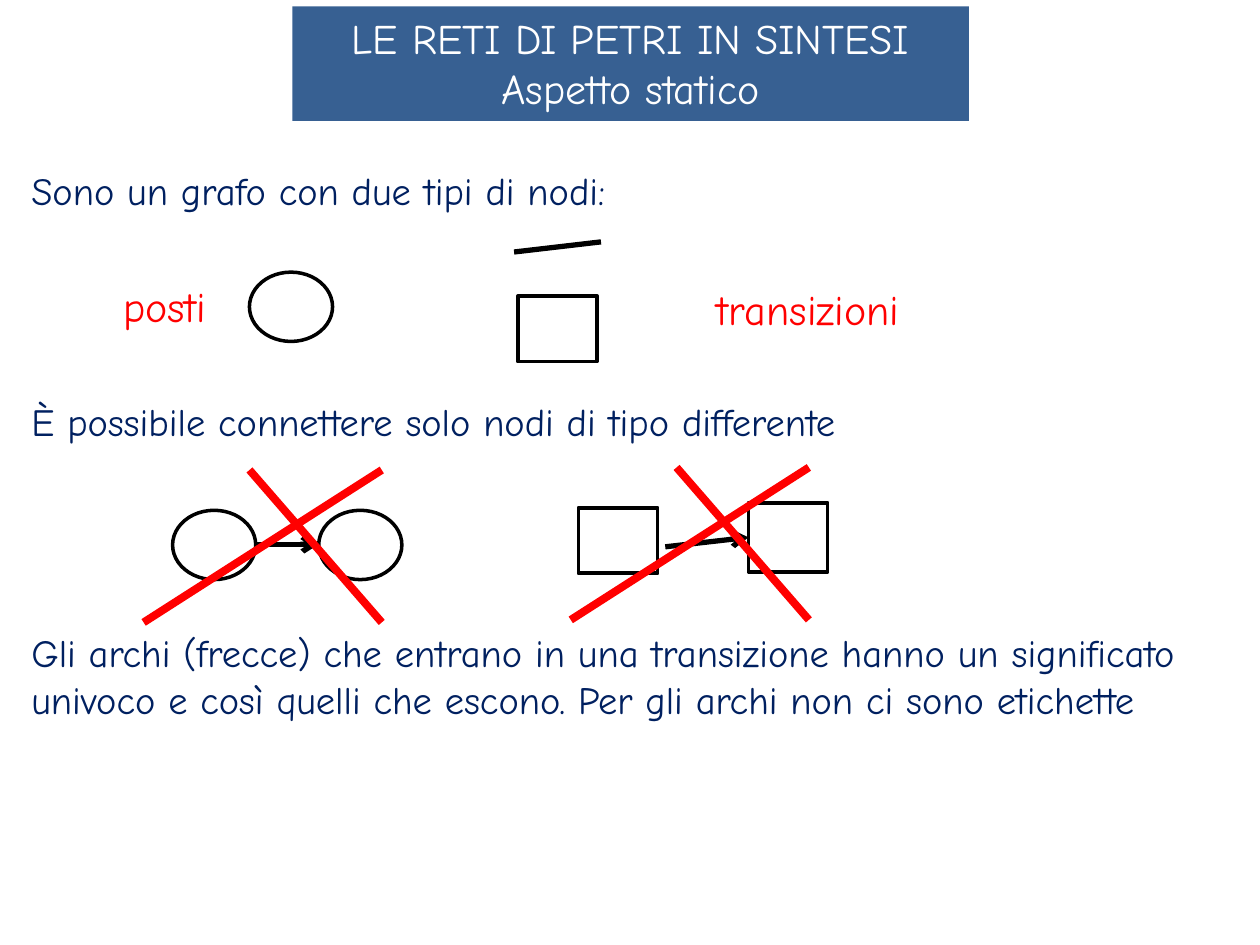
"""Build the slide that sums up the static side of Petri nets."""
from dataclasses import dataclass
from typing import Optional

from lxml.etree import SubElement
from pptx import Presentation
from pptx.dml.color import RGBColor
from pptx.enum.shapes import MSO_CONNECTOR as Connector, MSO_SHAPE as Shape
from pptx.enum.text import MSO_ANCHOR as Anchor, MSO_AUTO_SIZE as AutoSize, PP_ALIGN as Align
from pptx.oxml.ns import qn
from pptx.util import Inches, Pt

COLS, ROWS = 100, 75
WIDTH, HEIGHT = Inches(10), Inches(7.5)
FONT = "Comic Neue"
COLORS = {"banner": "376092", "title": "FFFFFF", "body": "002060",
          "label": "FF0000", "cross": "FF0000", "ink": "000000"}
BODY_SIZE = 22
BODY_GAP = 4 * 1.2 * BODY_SIZE
TITLE = ["LE RETI DI PETRI IN SINTESI", "Aspetto statico"]
BODY = [
    "Sono un grafo con due tipi di nodi:",
    "È possibile connettere solo nodi di tipo differente",
    "Gli archi (frecce) che entrano in una transizione hanno un significato univoco "
    "e così quelli che escono. Per gli archi non ci sono etichette",
]


@dataclass(frozen=True)
class Box:
    col: float
    row: float
    cols: float
    rows: float

    def emu(self) -> tuple:
        return x(self.col), y(self.row), x(self.cols), y(self.rows)


@dataclass(frozen=True)
class Node:
    kind: Shape
    box: Box


@dataclass(frozen=True)
class Line:
    col1: float
    row1: float
    col2: float
    row2: float
    color: str = "ink"
    weight: float = 3
    arrow: bool = False


@dataclass(frozen=True)
class Label:
    text: str
    box: Box


def place(col: float, row: float) -> Node:
    return Node(Shape.OVAL, Box(col, row, 6.6, 5.5))


def transition(col: float, row: float, rows: float = 5.2) -> Node:
    return Node(Shape.RECTANGLE, Box(col, row, 6.3, rows))


def cross(col: float, row: float) -> list:
    right, bottom = col + 18.9, row + 12.1
    return [Line(right, row, col, bottom, "cross", 4.5),
            Line(col + 8.4, row, right, bottom, "cross", 4.5)]


LABELS = [Label("posti", Box(8.8, 21.8, 9.8, 5)),
          Label("transizioni", Box(55.9, 22, 18.5, 5))]
TYPES = [place(19.8, 21.6), transition(41.1, 23.5)]
BAR = Line(40.8, 20, 47.7, 19.2)
PLACES = [place(13.7, 40.5), place(25.3, 40.5)]
PLACE_ARC = Line(20.3, 43.2, 25.3, 43.2, arrow=True)
TRANSITIONS = [transition(45.9, 40.3), transition(59.4, 39.9, 5.5)]
TRANSITION_ARC = Line(52.8, 43.4, 59.4, 42.7, arrow=True)
CROSSES = cross(11.4, 37.3) + cross(45.3, 37.1)


def x(cols: float) -> int:
    return round(WIDTH * cols / COLS)


def y(rows: float) -> int:
    return round(HEIGHT * rows / ROWS)


def rgb(name: str) -> RGBColor:
    return RGBColor.from_string(COLORS[name])


def write(sp, lines: list, *, color: str, size: float = 24, wrap: bool = False,
          align: Align = Align.LEFT, gap: float = 0) -> None:
    tf = sp.text_frame
    tf.word_wrap = wrap
    tf.auto_size = AutoSize.NONE if wrap else AutoSize.SHAPE_TO_FIT_TEXT
    tf.vertical_anchor = Anchor.TOP
    for i, line in enumerate(lines):
        p = tf.add_paragraph() if i else tf.paragraphs[0]
        p.alignment = align
        p.space_before = Pt(gap if i else 0)
        r = p.add_run()
        r.text = line
        r.font.name, r.font.size = FONT, Pt(size)
        r.font.color.rgb = rgb(color)


def add_node(shapes, node: Node):
    sp = shapes.add_shape(node.kind, *node.box.emu())
    sp.shadow.inherit = False
    sp.fill.background()
    sp.line.color.rgb = rgb("ink")
    sp.line.width = Pt(2)
    return sp


def add_line(shapes, line: Line, target: Optional[object] = None) -> None:
    cn = shapes.add_connector(Connector.STRAIGHT, x(line.col1), y(line.row1),
                              x(line.col2), y(line.row2))
    cn.line.color.rgb = rgb(line.color)
    cn.line.width = Pt(line.weight)
    if line.arrow:
        SubElement(cn.line._get_or_add_ln(), qn("a:tailEnd"), type="arrow")
    SubElement(cn._element.spPr, qn("a:effectLst"))
    if target is not None:
        cn.end_connect(target, 1)


def add_label(shapes, label: Label) -> None:
    write(shapes.add_textbox(*label.box.emu()), [label.text], color="label")


def main() -> None:
    prs = Presentation()
    prs.slide_width, prs.slide_height = WIDTH, HEIGHT
    s = prs.slides.add_slide(prs.slide_layouts[6])

    banner = s.shapes.add_shape(Shape.RECTANGLE, *Box(23.2, 0.5, 53.7, 9.1).emu())
    banner.shadow.inherit = False
    banner.fill.solid()
    banner.fill.fore_color.rgb = rgb("banner")
    banner.line.fill.background()
    write(banner, TITLE, color="title", align=Align.CENTER)

    body = s.shapes.add_textbox(*Box(1.5, 12.8, 94.2, 52.8).emu())
    write(body, BODY, color="body", size=BODY_SIZE, wrap=True, gap=BODY_GAP)

    legend = s.shapes.add_group_shape().shapes
    for node in TYPES:
        add_node(legend, node)
    add_line(legend, BAR)
    for label in LABELS:
        add_label(legend, label)

    pairs = s.shapes.add_group_shape().shapes
    for node in PLACES:
        add_node(pairs, node)
    add_line(pairs, PLACE_ARC)
    _, target = [add_node(pairs, node) for node in TRANSITIONS]
    add_line(pairs, TRANSITION_ARC, target)

    crosses = s.shapes.add_group_shape().shapes
    for line in CROSSES:
        add_line(crosses, line)

    prs.save("out.pptx")


if __name__ == "__main__":
    main()
